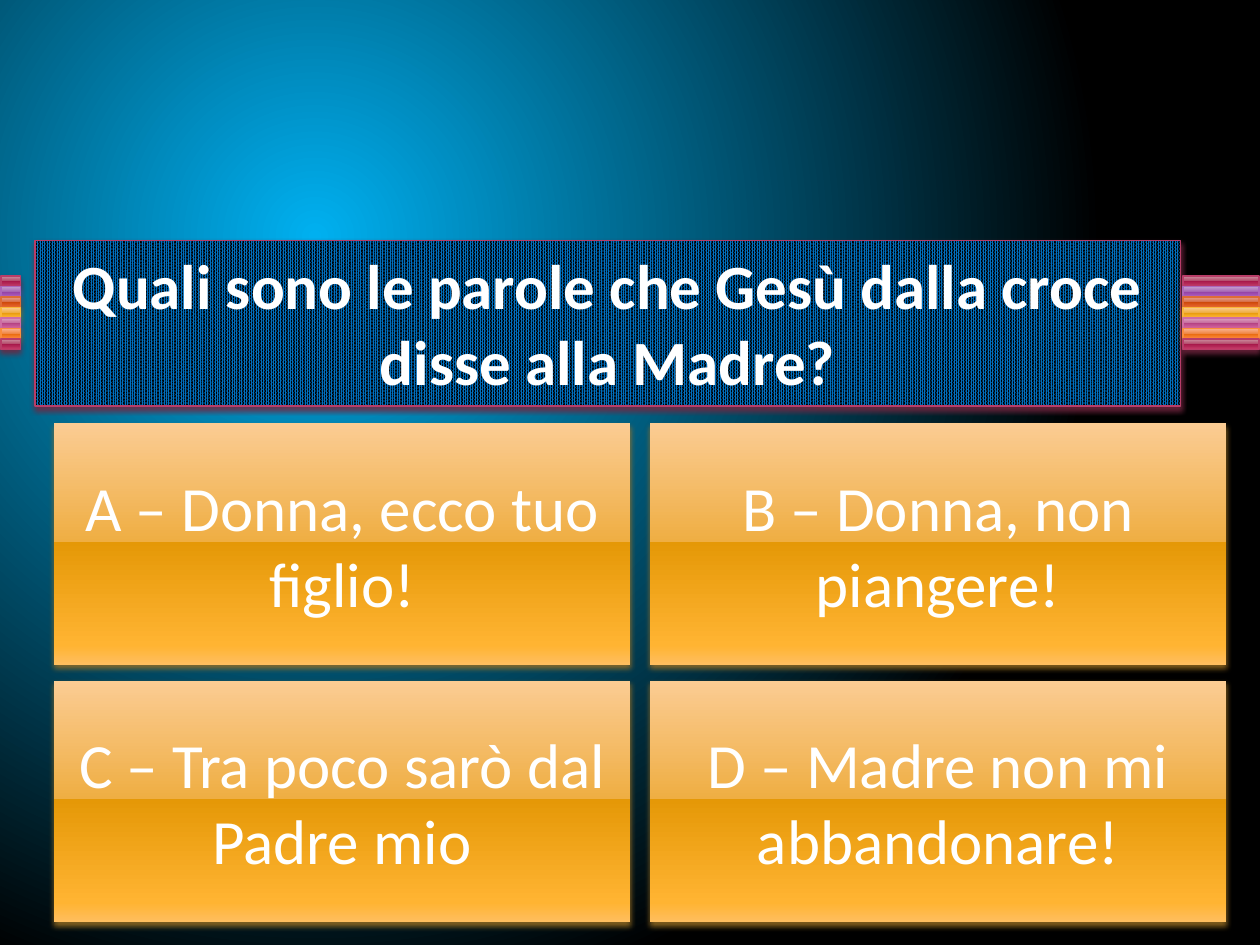
from pptx import Presentation
from pptx.dml.color import RGBColor
from pptx.enum.dml import MSO_PATTERN
from pptx.enum.shapes import MSO_SHAPE
from pptx.enum.text import MSO_ANCHOR, MSO_AUTO_SIZE, PP_ALIGN
from pptx.oxml import parse_xml
from pptx.oxml.ns import nsdecls, qn
from pptx.util import Pt

RECT = MSO_SHAPE.RECTANGLE
CENTER = PP_ALIGN.CENTER
TOP, MIDDLE = MSO_ANCHOR.TOP, MSO_ANCHOR.MIDDLE
GROW, NO_FIT = MSO_AUTO_SIZE.SHAPE_TO_FIT_TEXT, MSO_AUTO_SIZE.NONE
WEAVE = MSO_PATTERN.PERCENT_90

FONT = "Calibri"
COLORS = {"sky": "00B0F0", "black": "000000", "white": "FFFFFF", "blue": "0070C0"}
LINES = {"rose": "B83D68", "violet": "AC66BB", "rust": "DE6C36",
         "amber": "F9B639", "pink": "CF6DA4", "orange": "FA8D3D"}
SHADOWS = {"rose": "722640", "violet": "6A3F73", "rust": "894321",
           "amber": "9A7023", "pink": "804365", "orange": "9A5726"}
GLOSS = {
    "rose": "CE94A2 B34869 A61749 C13764 CA5D7C",
    "violet": "C6A2D0 A666B4 8F3EA1 AD5DBF BA76CA",
    "rust": "E7A493 D66B42 CC4809 E9642C F07B55",
    "amber": "FBCC93 EFAE43 E59807 FFB432 FFBE5F",
    "pink": "DDA4C1 C66B9D B34181 D361A0 DC79AE",
    "orange": "FBB494 F08745 E5670B FF8736 FF9961",
}
GLOSS_STOPS = (0, 49, 49, 92, 100)
STRIPES = ("rose", "violet", "rust", "amber", "pink", "orange", "rose")

QUESTION = "Quali sono le parole che Gesù dalla croce disse alla Madre?"
ANSWERS = ("A – Donna, ecco tuo figlio!", "B – Donna, non piangere!",
           "C – Tra poco sarò dal Padre mio", "D – Madre non mi abbandonare!")


def rgb(value):
    return RGBColor.from_string(value)


def set_gradient(fill, owner, stops, direction):
    """Fill with (percent, colour) stops; direction is an a:lin or a:path element."""
    fill.gradient()
    old = next(owner.iter(qn("a:gradFill")))
    gs = "".join(f'<a:gs pos="{pos * 1000}"><a:srgbClr val="{color}"/></a:gs>'
                 for pos, color in stops)
    old.getparent().replace(old, parse_xml(
        f'<a:gradFill {nsdecls("a")} rotWithShape="1">'
        f'<a:gsLst>{gs}</a:gsLst>{direction}</a:gradFill>'))


def set_gloss(sp, tone):
    set_gradient(sp.fill, sp.element.spPr, zip(GLOSS_STOPS, GLOSS[tone].split()),
                 '<a:lin ang="5400000" scaled="0"/>')


def set_line(sp, tone):
    sp.line.color.rgb = rgb(LINES[tone])
    sp.line.width = Pt(0.9)


def set_shadow(sp, tone):
    sp.shadow.inherit = False
    sp.element.spPr.find(qn("a:effectLst")).append(parse_xml(
        f'<a:outerShdw {nsdecls("a")} blurRad="{Pt(3.1)}" dist="{Pt(2)}" '
        f'dir="5400000" rotWithShape="0"><a:srgbClr val="{SHADOWS[tone]}">'
        f'<a:alpha val="83000"/></a:srgbClr></a:outerShdw>'))


def set_text(sp, text, anchor, fit, bold=False):
    tf = sp.text_frame
    tf.word_wrap = True
    tf.auto_size = fit
    tf.vertical_anchor = anchor
    p = tf.paragraphs[0]
    p.alignment = CENTER
    r = p.add_run()
    r.text = text
    r.font.name = FONT
    r.font.size = Pt(36)
    r.font.bold = bold
    r.font.color.rgb = rgb(COLORS["white"])


def add_background(s):
    set_gradient(s.background.fill, s.element,
                 ((0, COLORS["sky"]), (100, COLORS["black"])),
                 '<a:path path="circle"><a:fillToRect l="50000" t="50000" '
                 'r="100000" b="100000"/></a:path>')


def add_stripes(s, left, top, width, height):
    step = height / len(STRIPES)
    for i, tone in enumerate(STRIPES):
        sp = s.shapes.add_shape(RECT, Pt(left), Pt(top + i * step), Pt(width), Pt(step))
        set_gloss(sp, tone)
        set_line(sp, tone)
        set_shadow(sp, tone)


def add_question(s, left, top, width, height):
    sp = s.shapes.title
    sp.left, sp.top, sp.width, sp.height = Pt(left), Pt(top), Pt(width), Pt(height)
    sp.fill.patterned()
    sp.fill.pattern = WEAVE
    sp.fill.fore_color.rgb = rgb(COLORS["blue"])
    sp.fill.back_color.rgb = rgb(COLORS["black"])
    set_line(sp, "rose")
    set_shadow(sp, "rose")
    set_text(sp, QUESTION, TOP, GROW, bold=True)


def add_answers(s, left, top, width, height, gap_x=11.5, gap_y=9):
    """Two by two grid of answer cards."""
    w, h = (width - gap_x) / 2, (height - gap_y) / 2
    for i, text in enumerate(ANSWERS):
        row, col = divmod(i, 2)
        sp = s.shapes.add_shape(RECT, Pt(left + col * (w + gap_x)),
                                Pt(top + row * (h + gap_y)), Pt(w), Pt(h))
        set_gloss(sp, "amber")
        sp.line.fill.background()
        set_shadow(sp, "amber")
        set_text(sp, text, MIDDLE, NO_FIT)


def main():
    prs = Presentation()
    prs.slide_width, prs.slide_height = Pt(720), Pt(540)
    s = prs.slides.add_slide(prs.slide_layouts[5])
    add_background(s)
    add_stripes(s, 0.7, 157.7, 11, 42)
    add_stripes(s, 676, 157.7, 43.5, 42)
    add_answers(s, 31, 242, 669.5, 285)
    add_question(s, 20, 137.5, 654.5, 94.5)
    prs.save("out.pptx")


if __name__ == "__main__":
    main()
